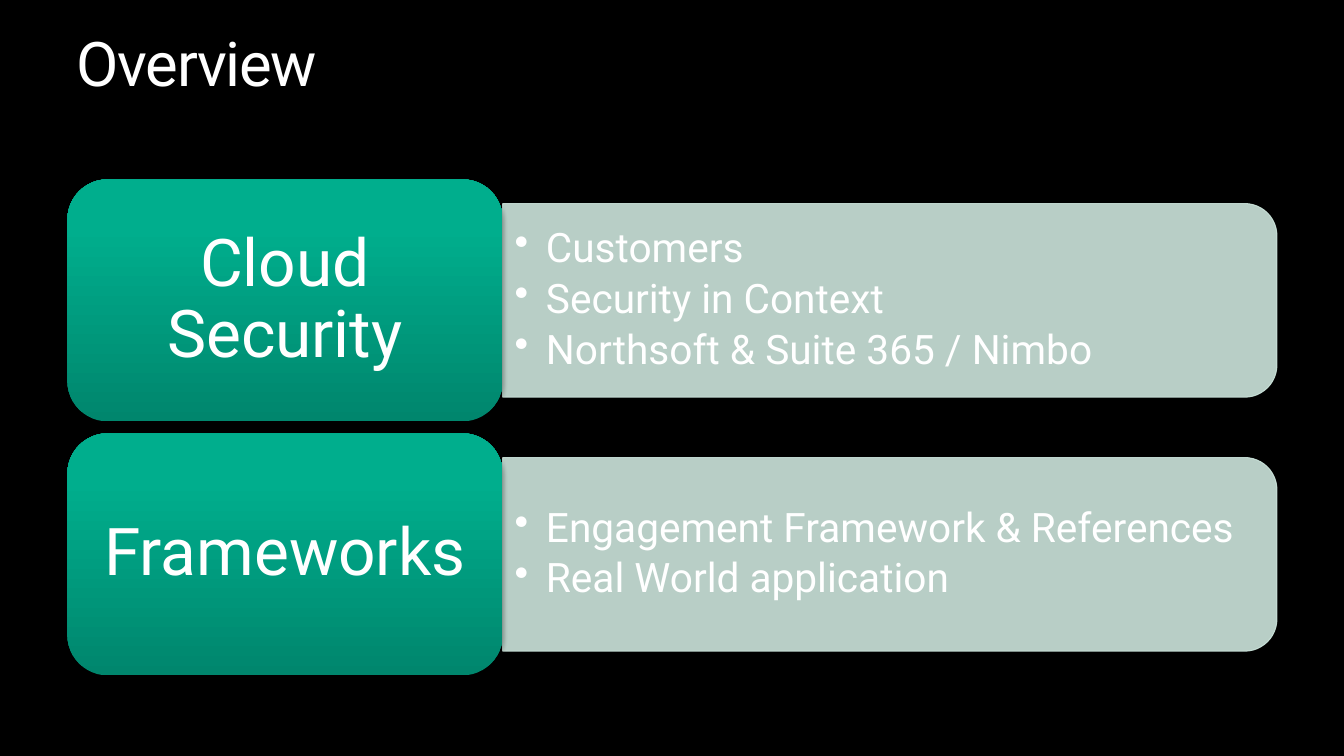
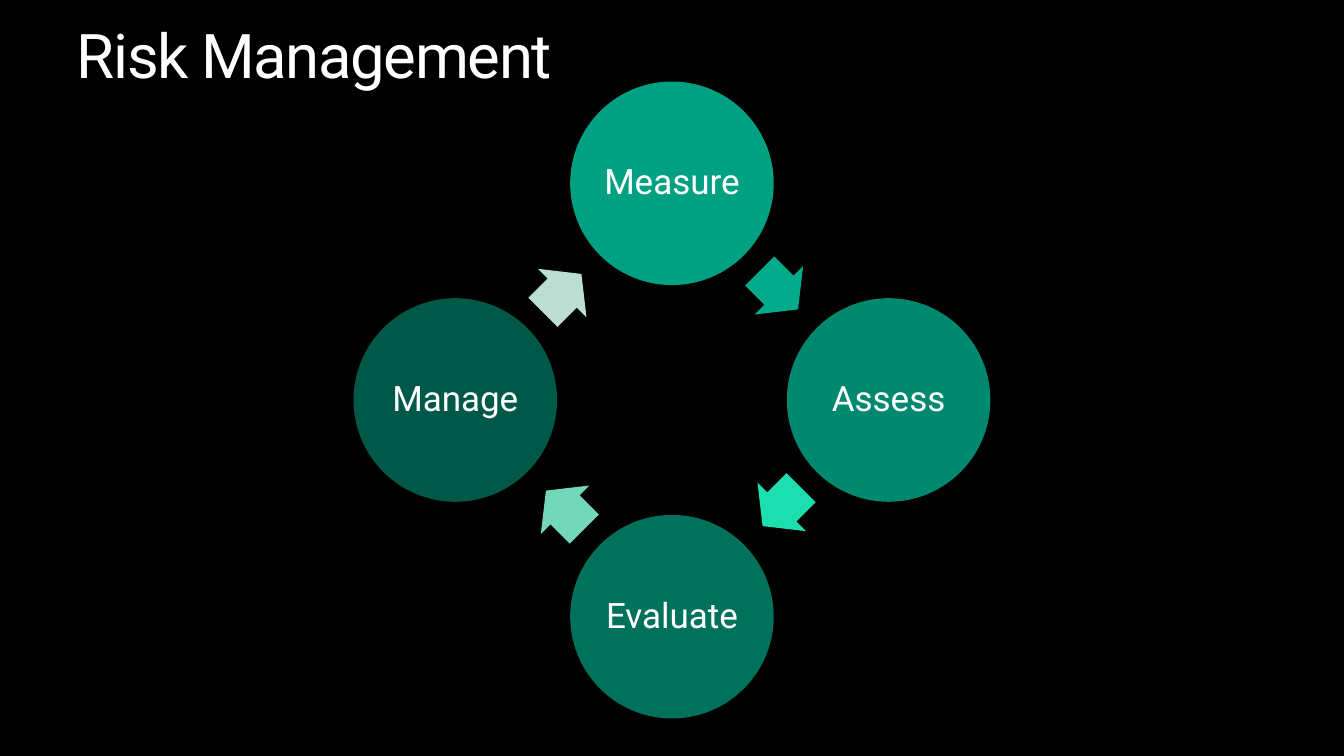
"""Build a two-slide deck: an overview of topics and a risk management cycle."""
import math
from dataclasses import dataclass

from lxml import etree
from pptx import Presentation
from pptx import util as u
from pptx.dml.color import RGBColor
from pptx.enum import shapes, text
from pptx.oxml.ns import qn

OVERVIEW = {
    "title": "Overview",
    "title_top": 0.84,
    "topics": [
        ("Cloud Security", ["Customers", "Security in Context", "Northsoft & Suite 365 / Nimbo"]),
        ("Frameworks", ["Engagement Framework & References", "Real World application"]),
    ],
}
CYCLE = {
    "title": "Risk Management",
    "title_top": 0.64,
    "steps": [
        ("Measure", 90, "01AB8B"),
        ("Assess", 77, "1DDEAF"),
        ("Evaluate", 63, "73D7B9"),
        ("Manage", 50, "BCDDD2"),
    ],
}


@dataclass(frozen=True)
class Theme:
    font: str = "Roboto"
    background: str = "000000"
    ink: str = "FFFFFF"
    panel: str = "CCE5DC"
    tile_bottom: str = "00866D"
    tile_top: str = "00AE8D"
    circle: str = "01B391"
    title_size: int = 44
    tile_size: int = 47
    bullet_size: int = 29
    step_size: int = 25


THEME = Theme()
SLIDE_WIDTH, SLIDE_HEIGHT = 33.87, 19.05
TITLE_LEFT, TITLE_WIDTH, TITLE_HEIGHT = 1.94, 15.5, 1.7
TILE_LEFT, TILE_TOP, TILE_WIDTH, TILE_HEIGHT, TILE_GAP = 1.7, 4.52, 10.97, 6.1, 0.3
PANEL_WIDTH, PANEL_HEIGHT = 19.51, 4.88
BULLET_WIDTH, BULLET_HEIGHT, BULLET_INDENT = 19.25, 4.4, 0.79
CYCLE_CENTER_X, CYCLE_CENTER_Y, CYCLE_RADIUS = SLIDE_WIDTH / 2, 10.08, 5.46
CIRCLE_SIZE, ARROW_LENGTH, ARROW_WIDTH = 5.13, 1.37, 1.73
ARROW_LAG = 0.75


def color(value):
    return RGBColor.from_string(value)


def write(shape, lines, size, align, anchor, inset_x=0, inset_y=0):
    frame = shape.text_frame
    frame.word_wrap = True
    frame.vertical_anchor = anchor
    frame.margin_left = frame.margin_right = u.Cm(inset_x)
    frame.margin_top = frame.margin_bottom = u.Cm(inset_y)
    frame.text = "\n".join(lines)
    for paragraph in frame.paragraphs:
        paragraph.alignment = align
        paragraph.line_spacing = 0.9
        for run in paragraph.runs:
            run.font.name = THEME.font
            run.font.size = u.Pt(size)
            run.font.color.rgb = color(THEME.ink)
    return frame


def add_bullets(frame):
    for paragraph in frame.paragraphs:
        paragraph.space_after = u.Pt(5)
        properties = paragraph._p.get_or_add_pPr()
        properties.set("marL", str(u.Cm(BULLET_INDENT)))
        properties.set("indent", str(-u.Cm(BULLET_INDENT)))
        etree.SubElement(properties, qn("a:buChar"), char="•")


def add_centered(slide, kind, center_x, center_y, width, height, fill=None):
    shape = slide.shapes.add_shape(
        kind, u.Cm(center_x - width / 2), u.Cm(center_y - height / 2), u.Cm(width), u.Cm(height))
    shape.shadow.inherit = False
    shape.line.fill.background()
    if fill:
        shape.fill.solid()
        shape.fill.fore_color.rgb = color(fill)
    return shape


def set_opacity(shape, percent):
    for paint in shape._element.spPr.iter(qn("a:srgbClr")):
        etree.SubElement(paint, qn("a:alpha"), val=str(percent * 1000))


def cast_shadow(shape):
    effects = shape._element.spPr.find(qn("a:effectLst"))
    shadow = etree.SubElement(
        effects, qn("a:outerShdw"), blurRad=str(u.Pt(3.1)), dist=str(u.Pt(1.8)),
        dir="5400000", rotWithShape="0")
    paint = etree.SubElement(shadow, qn("a:srgbClr"), val="000000")
    etree.SubElement(paint, qn("a:alpha"), val="35000")


def add_slide(presentation, content):
    slide = presentation.slides.add_slide(presentation.slide_layouts[6])
    box = slide.shapes.add_textbox(
        u.Cm(TITLE_LEFT), u.Cm(content["title_top"]), u.Cm(TITLE_WIDTH), u.Cm(TITLE_HEIGHT))
    frame = write(box, [content["title"]], THEME.title_size, text.PP_ALIGN.LEFT, text.MSO_ANCHOR.TOP)
    frame.paragraphs[0].runs[0].font._element.set("spc", "-100")
    return slide


def add_topic(slide, center_y, heading, points):
    tile_right = TILE_LEFT + TILE_WIDTH
    panel = add_centered(
        slide, shapes.MSO_SHAPE.ROUND_2_SAME_RECTANGLE, tile_right + PANEL_WIDTH / 2, center_y,
        PANEL_HEIGHT, PANEL_WIDTH, THEME.panel)
    panel.rotation = 90
    panel.line.color.rgb = color(THEME.panel)
    panel.line.width = u.Pt(0.75)
    set_opacity(panel, 90)
    cast_shadow(panel)

    box = slide.shapes.add_textbox(
        u.Cm(tile_right), u.Cm(center_y - BULLET_HEIGHT / 2), u.Cm(BULLET_WIDTH), u.Cm(BULLET_HEIGHT))
    add_bullets(write(
        box, points, THEME.bullet_size, text.PP_ALIGN.LEFT, text.MSO_ANCHOR.MIDDLE, 0.3, 0.15))

    tile = add_centered(
        slide, shapes.MSO_SHAPE.ROUNDED_RECTANGLE, TILE_LEFT + TILE_WIDTH / 2, center_y,
        TILE_WIDTH, TILE_HEIGHT)
    tile.fill.gradient()
    tile.fill.gradient_angle = 90
    stops = [(0, THEME.tile_bottom), (0.8, THEME.tile_top)]
    for stop, (position, value) in zip(tile.fill.gradient_stops, stops):
        stop.position = position
        stop.color.rgb = color(value)
    cast_shadow(tile)
    write(tile, [heading], THEME.tile_size, text.PP_ALIGN.CENTER, text.MSO_ANCHOR.MIDDLE, 0.51, 0.25)


def cycle_point(degrees, radius):
    angle = math.radians(degrees)
    return CYCLE_CENTER_X + radius * math.cos(angle), CYCLE_CENTER_Y + radius * math.sin(angle)


def add_step(slide, degrees, turn, label, opacity, arrow_color):
    circle = add_centered(
        slide, shapes.MSO_SHAPE.OVAL, *cycle_point(degrees, CYCLE_RADIUS),
        CIRCLE_SIZE, CIRCLE_SIZE, THEME.circle)
    set_opacity(circle, opacity)
    cast_shadow(circle)
    write(circle, [label], THEME.step_size, text.PP_ALIGN.CENTER, text.MSO_ANCHOR.MIDDLE, 0.08, 0.08)

    chord_distance = CYCLE_RADIUS * math.cos(math.radians(turn / 2))
    arrow = add_centered(
        slide, shapes.MSO_SHAPE.RIGHT_ARROW,
        *cycle_point(degrees + turn / 2 - ARROW_LAG, chord_distance),
        ARROW_LENGTH, ARROW_WIDTH, arrow_color)
    arrow.adjustments[0] = 0.6
    arrow.adjustments[1] = 0.5
    arrow.rotation = (degrees + turn / 2 + 90) % 360


def main():
    presentation = Presentation()
    presentation.slide_width = u.Cm(SLIDE_WIDTH)
    presentation.slide_height = u.Cm(SLIDE_HEIGHT)
    background = presentation.slide_master.background.fill
    background.solid()
    background.fore_color.rgb = color(THEME.background)

    overview = add_slide(presentation, OVERVIEW)
    for row, (heading, points) in enumerate(OVERVIEW["topics"]):
        center_y = TILE_TOP + TILE_HEIGHT / 2 + row * (TILE_HEIGHT + TILE_GAP)
        add_topic(overview, center_y, heading, points)

    cycle = add_slide(presentation, CYCLE)
    turn = 360 / len(CYCLE["steps"])
    for position, step in enumerate(CYCLE["steps"]):
        add_step(cycle, position * turn - 90, turn, *step)

    presentation.save("out.pptx")


if __name__ == "__main__":
    main()
